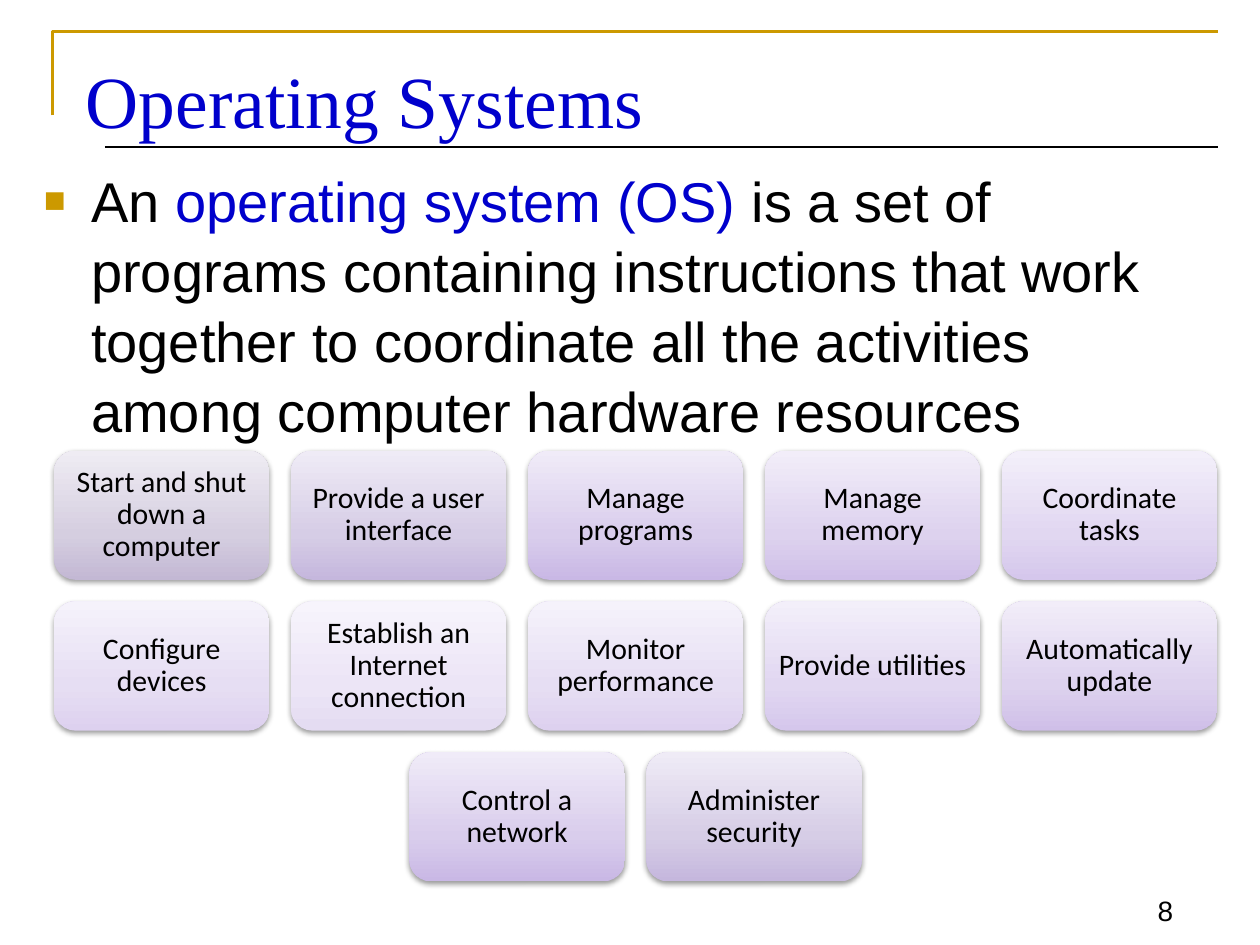
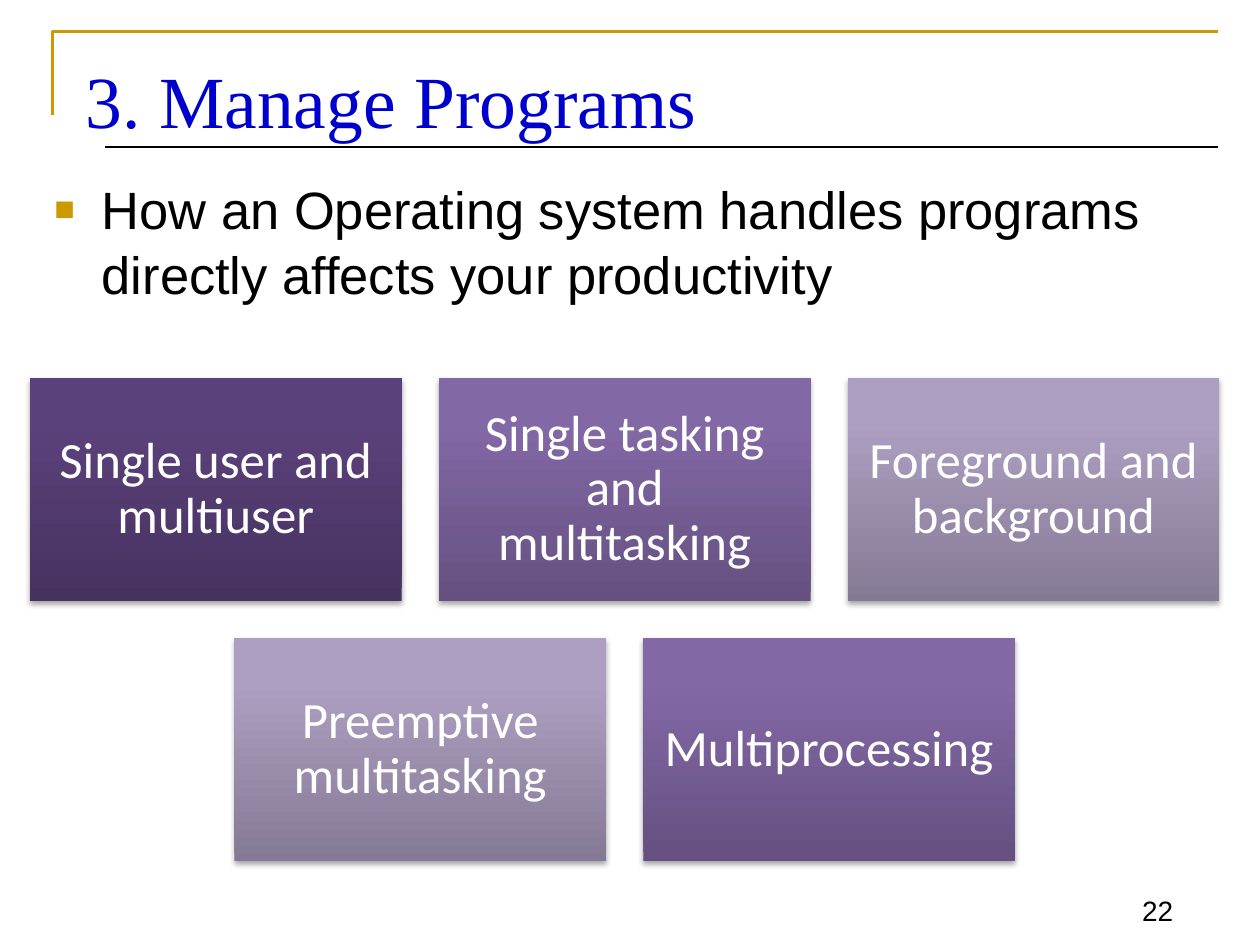
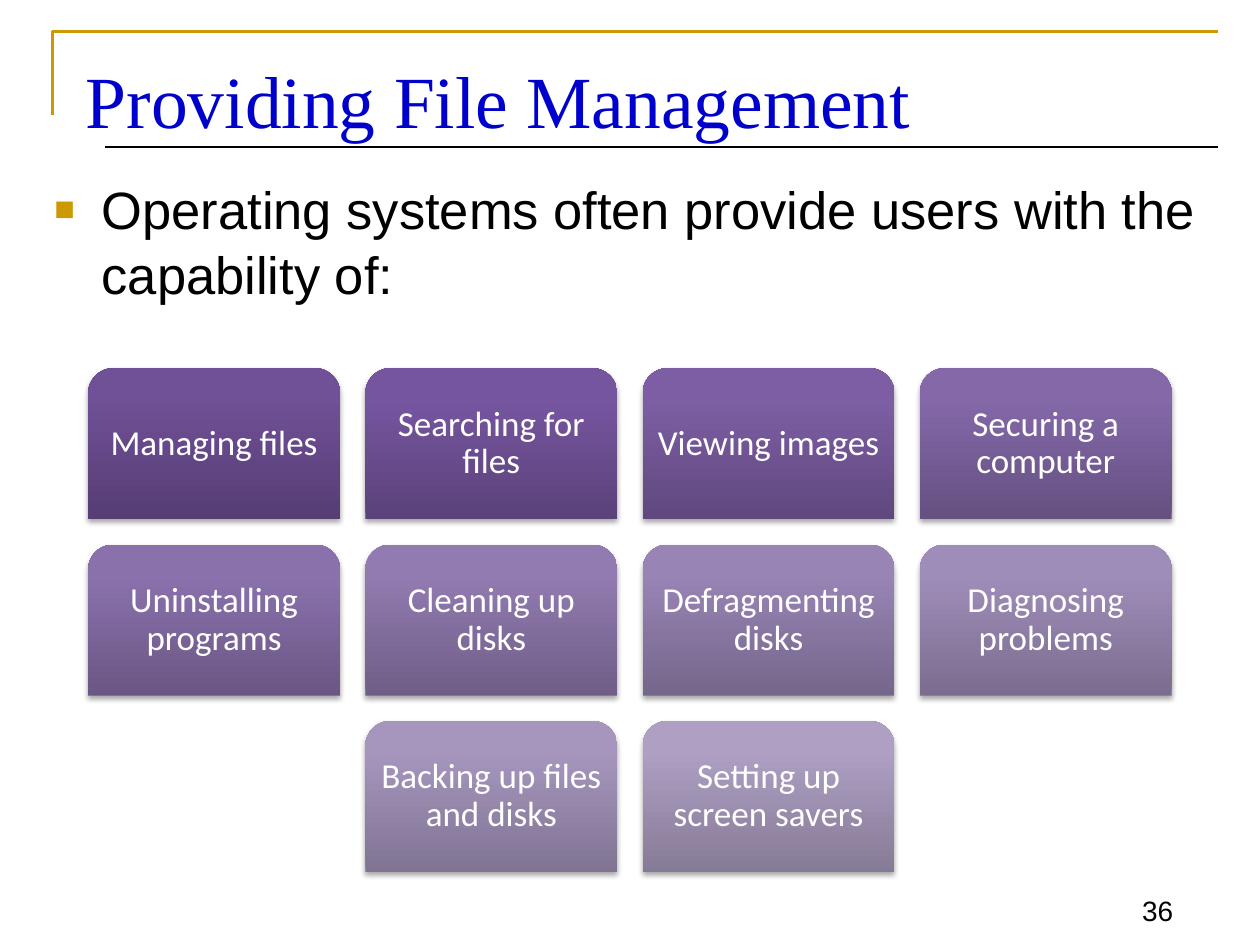
import copy
from dataclasses import dataclass
from typing import Any

import pptx
import pptx.dml.color
import pptx.enum.shapes
import pptx.enum.text
import pptx.oxml
import pptx.oxml.ns
import pptx.util

Pt = pptx.util.Pt
RGBColor = pptx.dml.color.RGBColor
Preset = pptx.enum.shapes.MSO_SHAPE
Anchor = pptx.enum.text.MSO_ANCHOR
Align = pptx.enum.text.PP_ALIGN
qn = pptx.oxml.ns.qn

Gradient = tuple[RGBColor, ...]

BLACK = RGBColor(0x00, 0x00, 0x00)
WHITE = RGBColor(0xFF, 0xFF, 0xFF)
BLUE = RGBColor(0x00, 0x00, 0xCC)
GOLD = RGBColor(0xCC, 0x99, 0x00)


def gradients(*rows: str) -> tuple[Gradient, ...]:
    """Turn rows of three hex colours, bottom to top, into gradients."""
    return tuple(tuple(RGBColor.from_string(code) for code in row.split()) for row in rows)


LILACS = gradients(
    "C3B8D4 D5CEE0 EFECF3",
    "C5B7DD D6CDE6 EFEBF6",
    "C9B8E5 D9CDEC F0EBF8",
    "CFBFE8 DDD2EE F2EDF9",
    "D5C7EC E1D7F1 F3EFFA",
    "DDD1EF E6DEF3 F5F2FB",
    "E4DCF2 ECE5F6 F7F4FC",
)
PURPLES = gradients(
    "46325F 5B417B 5B407C",
    "655080 8368A6 8368A8",
    "857A95 AD9FC1 AE9FC3",
)
VIOLETS = gradients(
    "563D74 705097 704F99",
    "5B427A 76559F 7654A1",
    "60487E 7D5EA4 7D5DA6",
    "655081 8468A8 8467AA",
    "6B5785 8A71AC 8B71AE",
    "705E88 917BB0 927AB2",
    "75668B 9884B5 9984B7",
    "7B6D8F 9F8DB9 A08DBB",
    "807492 A696BE A796C0",
    "867B96 AE9FC3 AE9FC4",
)

TILE_HEIGHT_RATIO = 0.6
TILE_GAP_RATIO = 0.1
# Distance a rounded corner pushes text inwards, as a share of the tile height.
CORNER_INSET_RATIO = 0.29 / 6
ROUNDED_SIDES = {
    Preset.RECTANGLE: (),
    Preset.ROUNDED_RECTANGLE: ("left", "top", "right", "bottom"),
    Preset.ROUND_2_SAME_RECTANGLE: ("left", "top", "right"),
}


@dataclass(frozen=True)
class Frame:
    left: float
    top: float
    width: float
    height: float

    def lengths(self) -> tuple[pptx.util.Length, ...]:
        return tuple(Pt(value) for value in (self.left, self.top, self.width, self.height))


@dataclass(frozen=True)
class Span:
    text: str
    color: RGBColor = BLACK


@dataclass(frozen=True)
class TileStyle:
    preset: Preset
    size: float
    color: RGBColor
    middle_stop: float
    shadow_alpha: int
    shadow_distance: float


@dataclass(frozen=True)
class TileGrid:
    """Rows of equal tiles, each row centred on the same vertical axis."""

    center: float
    top: float
    tile_width: float
    columns: int
    style: TileStyle
    shades: tuple[Gradient, ...]
    labels: tuple[str, ...]


@dataclass(frozen=True)
class Page:
    number: int
    title: str
    body: tuple[Span, ...]
    body_frame: Frame
    body_size: float
    grid: TileGrid


TITLE_FRAME = Frame(42, 24, 654, 65.5)
NUMBER_FRAME = Frame(630, 498, 47.5, 35.3)

PAGES = (
    Page(
        8,
        "Operating Systems",
        (
            Span("An "),
            Span("operating system (OS) ", BLUE),
            Span(
                "is a set of programs containing instructions that work together "
                "to coordinate all the activities among computer hardware resources"
            ),
        ),
        Frame(18, 90, 672, 174),
        32,
        TileGrid(
            363.2, 257.5, 123.1, 5,
            TileStyle(Preset.ROUNDED_RECTANGLE, 17, BLACK, 0.35, 38, 1.6),
            LILACS + LILACS[-2:0:-1],
            (
                "Start and shut down a computer", "Provide a user interface",
                "Manage programs", "Manage memory", "Coordinate tasks",
                "Configure devices", "Establish an Internet connection",
                "Monitor performance", "Provide utilities", "Automatically update",
                "Control a network", "Administer security",
            ),
        ),
    ),
    Page(
        22,
        "3. Manage Programs",
        (Span("How an Operating system handles programs directly affects your productivity"),),
        Frame(24, 96, 672, 114),
        30,
        TileGrid(
            357, 216, 212.4, 3,
            TileStyle(Preset.RECTANGLE, 29, WHITE, 0.8, 35, 1.8),
            PURPLES + PURPLES[:0:-1],
            (
                "Single user and multiuser", "Single tasking and multitasking",
                "Foreground and background", "Preemptive multitasking", "Multiprocessing",
            ),
        ),
    ),
    Page(
        36,
        "Providing File Management",
        (Span("Operating systems often provide users with the capability of:"),),
        Frame(24, 96, 672, 102),
        30,
        TileGrid(
            360, 210.4, 144, 4,
            TileStyle(Preset.ROUND_2_SAME_RECTANGLE, 20, WHITE, 0.8, 35, 1.8),
            VIOLETS,
            (
                "Managing files", "Searching for files", "Viewing images",
                "Securing a computer", "Uninstalling programs", "Cleaning up disks",
                "Defragmenting disks", "Diagnosing problems",
                "Backing up files and disks", "Setting up screen savers",
            ),
        ),
    ),
)


def set_values(target: Any, values: dict[str, Any]) -> None:
    for name, value in values.items():
        setattr(target, name, value)


def add_span(para: Any, text: str, name: str, size: float, color: RGBColor) -> None:
    span = para.add_run()
    span.text = text
    set_values(span.font, {"name": name, "size": Pt(size)})
    span.font.color.rgb = color


def add_text_box(slide: Any, frame: Frame, anchor: Anchor) -> Any:
    """Add a wrapping text box and return its first paragraph."""
    box = slide.shapes.add_textbox(*frame.lengths())
    set_values(box.text_frame, {"word_wrap": True, "vertical_anchor": anchor})
    return box.text_frame.paragraphs[0]


def add_bullet(para: Any) -> None:
    properties = para._p.get_or_add_pPr()
    properties.set("marL", str(Pt(27)))
    properties.set("indent", str(Pt(-27)))
    namespace = pptx.oxml.ns.nsdecls("a")
    for element in (
        f'<a:buClr {namespace}><a:srgbClr val="{GOLD}"/></a:buClr>',
        f'<a:buSzPct {namespace} val="65000"/>',
        f'<a:buFont {namespace} typeface="Arial"/>',
        f'<a:buChar {namespace} char="■"/>',
    ):
        properties.append(pptx.oxml.parse_xml(element))


def add_header_lines(slide: Any) -> None:
    builder = slide.shapes.build_freeform(Pt(30), Pt(66))
    builder.add_line_segments([(Pt(30), Pt(18)), (Pt(696), Pt(18))], close=False)
    bracket = builder.convert_to_shape()
    bracket.shadow.inherit = False
    bracket.fill.background()
    rule = slide.shapes.add_connector(
        pptx.enum.shapes.MSO_CONNECTOR.STRAIGHT, Pt(60), Pt(84), Pt(696), Pt(84)
    )
    for shape, color, width in ((bracket, GOLD, 1.5), (rule, BLACK, 0.75)):
        shape.line.color.rgb = color
        shape.line.width = Pt(width)
    no_effects = pptx.oxml.parse_xml(f'<a:effectLst {pptx.oxml.ns.nsdecls("a")}/>')
    rule._element.spPr.append(no_effects)


def fill_gradient(shape: Any, colors: Gradient, middle_stop: float) -> None:
    """Fill from bottom to top with three colours."""
    shape.fill.gradient()
    shape.fill.gradient_angle = 90
    stop_list = shape._element.spPr.find(qn("a:gradFill")).find(qn("a:gsLst"))
    stop_list.append(copy.deepcopy(stop_list[0]))
    for stop, color, position in zip(shape.fill.gradient_stops, colors, (0, middle_stop, 1)):
        stop.color.rgb = color
        stop.position = position


def add_shadow(shape: Any, alpha: int, distance: float) -> None:
    shape.shadow.inherit = False
    shape._element.spPr.find(qn("a:effectLst")).append(
        pptx.oxml.parse_xml(
            f'<a:outerShdw {pptx.oxml.ns.nsdecls("a")} blurRad="{Pt(3.1)}" '
            f'dist="{Pt(distance)}" dir="5400000" rotWithShape="0">'
            f'<a:srgbClr val="{BLACK}"><a:alpha val="{alpha * 1000}"/></a:srgbClr>'
            "</a:outerShdw>"
        )
    )


def add_tile(slide: Any, frame: Frame, style: TileStyle, colors: Gradient, label: str) -> None:
    tile = slide.shapes.add_shape(style.preset, *frame.lengths())
    fill_gradient(tile, colors, style.middle_stop)
    tile.line.fill.background()
    add_shadow(tile, style.shadow_alpha, style.shadow_distance)
    margins = {}
    for side in ("left", "top", "right", "bottom"):
        rounded = side in ROUNDED_SIDES[style.preset]
        corner = CORNER_INSET_RATIO * frame.height if rounded else 0
        margins[f"margin_{side}"] = Pt(0.3 * style.size - corner)
    set_values(
        tile.text_frame, {"word_wrap": True, "vertical_anchor": Anchor.MIDDLE, **margins}
    )
    para = tile.text_frame.paragraphs[0]
    set_values(para, {"alignment": Align.CENTER, "line_spacing": 0.9})
    add_span(para, label, "Calibri", style.size, style.color)


def add_grid(slide: Any, grid: TileGrid) -> None:
    width = grid.tile_width
    height = TILE_HEIGHT_RATIO * width
    gap = TILE_GAP_RATIO * width
    for index, (label, colors) in enumerate(zip(grid.labels, grid.shades)):
        row, column = divmod(index, grid.columns)
        row_count = min(grid.columns, len(grid.labels) - row * grid.columns)
        row_left = grid.center - (row_count * (width + gap) - gap) / 2
        frame = Frame(
            row_left + column * (width + gap), grid.top + row * (height + gap), width, height
        )
        add_tile(slide, frame, grid.style, colors, label)


def add_page(deck: Any, page: Page) -> None:
    slide = deck.slides.add_slide(deck.slide_layouts[6])
    add_header_lines(slide)

    number = add_text_box(slide, NUMBER_FRAME, Anchor.BOTTOM)
    number.alignment = Align.RIGHT
    add_span(number, str(page.number), "Arial", 16, BLACK)

    title = add_text_box(slide, TITLE_FRAME, Anchor.MIDDLE)
    add_span(title, page.title, "Times New Roman", 42, BLUE)

    body = add_text_box(slide, page.body_frame, Anchor.TOP)
    body.line_spacing = 1.04
    add_bullet(body)
    for span in page.body:
        add_span(body, span.text, "Arial", page.body_size, span.color)

    add_grid(slide, page.grid)


def main() -> None:
    deck = pptx.Presentation()
    set_values(deck, {"slide_width": Pt(720), "slide_height": Pt(540)})
    for page in PAGES:
        add_page(deck, page)
    deck.save("out.pptx")


if __name__ == "__main__":
    main()
